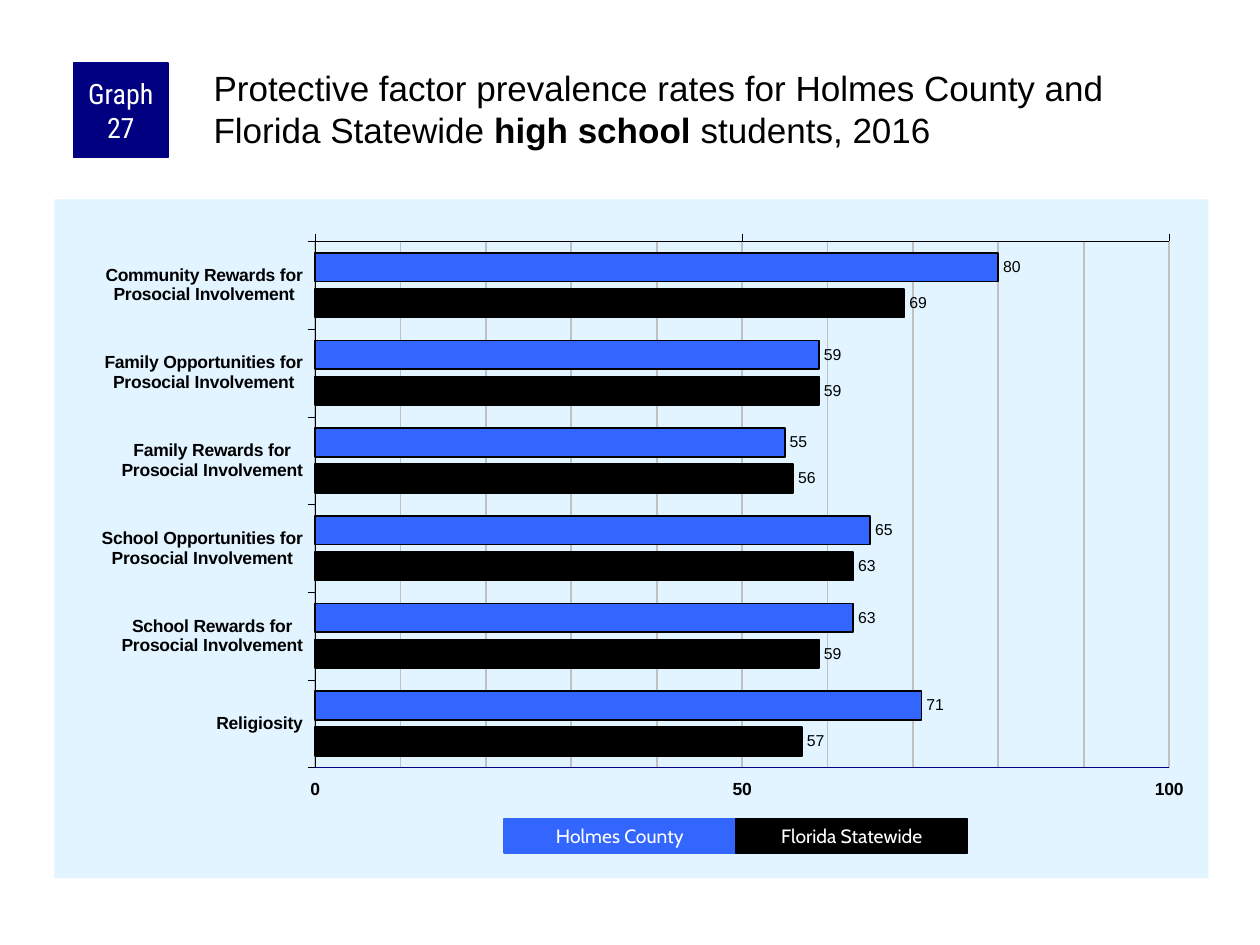
from copy import deepcopy
from lxml import etree
from pptx import Presentation
from pptx.chart.data import CategoryChartData
from pptx.dml.color import RGBColor
from pptx.enum.chart import XL_CHART_TYPE as ChartType, XL_LABEL_POSITION as LabelPos
from pptx.enum.chart import XL_TICK_LABEL_POSITION as TickLabelPos, XL_TICK_MARK as TickMark
from pptx.enum.shapes import MSO_CONNECTOR as Connector, MSO_SHAPE as Shape
from pptx.enum.text import MSO_ANCHOR as Anchor, MSO_AUTO_SIZE as AutoSize, PP_ALIGN as Align
from pptx.oxml import parse_xml
from pptx.oxml.ns import nsdecls, qn
from pptx.util import Pt

COLORS = {"navy": "000080", "blue": "3366FF", "black": "000000",
          "white": "FFFFFF", "panel": "E1F4FF", "grid": "C0C0C0"}


def rgb(name):
    return RGBColor.from_string(COLORS[name])


def style_font(font, face, size, color, bold=False):
    font.name, font.size, font.bold = face, Pt(size), bold
    font.color.rgb = rgb(color)


prs = Presentation()
prs.slide_width, prs.slide_height = Pt(720), Pt(540)
slide = prs.slides.add_slide(prs.slide_layouts[5])

factors = [
    ("Community Rewards for\nProsocial Involvement", 80, 69),
    ("Family Opportunities for\nProsocial Involvement", 59, 59),
    ("Family Rewards for\nProsocial Involvement", 55, 56),
    ("School Opportunities for\nProsocial Involvement", 65, 63),
    ("School Rewards for\nProsocial Involvement", 63, 59),
    ("Religiosity", 71, 57),
]
regions = [("Holmes County", "blue"), ("Florida Statewide", "black")]
names, *rates = zip(*factors)

prevalence = CategoryChartData()
prevalence.categories = names
for (region, color), values in zip(regions, rates):
    prevalence.add_series(region, values)

left, top, width, height = 31, 113.9, 659.5, 388
chart = slide.shapes.add_chart(ChartType.BAR_CLUSTERED, Pt(left), Pt(top),
                               Pt(width), Pt(height), prevalence).chart
chart.has_title = False
chart.has_legend = False
style_font(chart.font, "Arial", 11.8, "black")
chart.element.find(qn("c:chart")).addnext(parse_xml(
    f'<c:spPr {nsdecls("c", "a")}><a:solidFill><a:srgbClr val="{COLORS["panel"]}"/>'
    '</a:solidFill><a:ln><a:noFill/></a:ln></c:spPr>'))

frame = {"x": 0.226, "y": 0.062, "w": 0.74, "h": 0.775}
plot_area = chart.element.find(".//" + qn("c:plotArea"))
for old_layout in plot_area.findall(qn("c:layout")):
    plot_area.remove(old_layout)
layout = parse_xml(
    f'<c:layout {nsdecls("c")}><c:manualLayout><c:layoutTarget val="inner"/>'
    '<c:xMode val="edge"/><c:yMode val="edge"/></c:manualLayout></c:layout>')
for key, share in frame.items():
    etree.SubElement(layout[0], qn(f"c:{key}")).set("val", str(share))
plot_area.insert(0, layout)

bars = chart.plots[0]
bars.gap_width, bars.overlap, bars.vary_by_categories = 80, -25, False
for series, (region, color) in zip(bars.series, regions):
    series.format.fill.solid()
    series.format.fill.fore_color.rgb = rgb(color)
    series.format.line.color.rgb = rgb("black")
    series.format.line.width = Pt(1)
    labels = series.data_labels
    labels.show_value = True
    labels.position = LabelPos.OUTSIDE_END
    style_font(labels.font, "Arial", 9, "black")

factor_axis, rate_axis = chart.category_axis, chart.value_axis
for axis in (factor_axis, rate_axis):
    axis.major_tick_mark, axis.minor_tick_mark = TickMark.OUTSIDE, TickMark.NONE
    axis.format.line.color.rgb = rgb("black")
    axis.format.line.width = Pt(0.25)
    style_font(axis.tick_labels.font, "Arial", 10, "black", bold=True)
factor_axis.reverse_order = True
rate_axis.tick_label_position = TickLabelPos.HIGH
rate_axis.minimum_scale, rate_axis.maximum_scale = 0, 100
rate_axis.major_unit, rate_axis.minor_unit = 50, 10
rate_axis.has_major_gridlines = rate_axis.has_minor_gridlines = True
grid_line = rate_axis.major_gridlines.format.line
grid_line.color.rgb = rgb("grid")
grid_line.width = Pt(1)
major_grid = plot_area.find(".//" + qn("c:majorGridlines"))
minor_grid = plot_area.find(".//" + qn("c:minorGridlines"))
minor_grid.append(deepcopy(major_grid.find(qn("c:spPr"))))

base_left = left + width * frame["x"]
base_right = base_left + width * frame["w"]
base_y = top + height * (frame["y"] + frame["h"])
baseline = slide.shapes.add_connector(Connector.STRAIGHT, Pt(base_left), Pt(base_y),
                                      Pt(base_right), Pt(base_y))
baseline.line.color.rgb = rgb("navy")
baseline.line.width = Pt(1)
etree.SubElement(baseline.element.spPr, qn("a:effectLst"))

heading = slide.shapes.title
heading.left, heading.top, heading.width, heading.height = Pt(120), Pt(36), Pt(570), Pt(60)
text = heading.text_frame
text.word_wrap, text.auto_size, text.vertical_anchor = True, AutoSize.NONE, Anchor.TOP
text.margin_left = text.margin_top = Pt(2)
text.margin_right = text.margin_bottom = 0
sentence = text.paragraphs[0]
sentence.alignment = Align.LEFT
for part, bold in [
    ("Protective factor prevalence rates for Holmes County and Florida Statewide ", False),
    ("high school ", True),
    ("students, 2016", False),
]:
    run = sentence.add_run()
    run.text = part
    style_font(run.font, "Arial", 20, "black", bold)

boxes = [("Graph 27", "navy", 42, 36, 54, 54, "Roboto Condensed", 16)]
for index, (region, color) in enumerate(regions):
    boxes.append((region, color, 288 + 132.5 * index, 468, 132.5, 19.5, "Cabin", 11))
for label, color, x, y, w, h, face, size in boxes:
    box = slide.shapes.add_shape(Shape.RECTANGLE, Pt(x), Pt(y), Pt(w), Pt(h))
    box.shadow.inherit = False
    box.fill.solid()
    box.fill.fore_color.rgb = rgb(color)
    box.line.color.rgb = rgb(color)
    box.line.width = Pt(0.75)
    text = box.text_frame
    text.text = label
    text.word_wrap, text.vertical_anchor = True, Anchor.MIDDLE
    text.margin_left = text.margin_right = Pt(3.6)
    text.margin_top = text.margin_bottom = 0
    text.paragraphs[0].alignment = Align.CENTER
    style_font(text.paragraphs[0].runs[0].font, face, size, "white")

prs.save("out.pptx")
